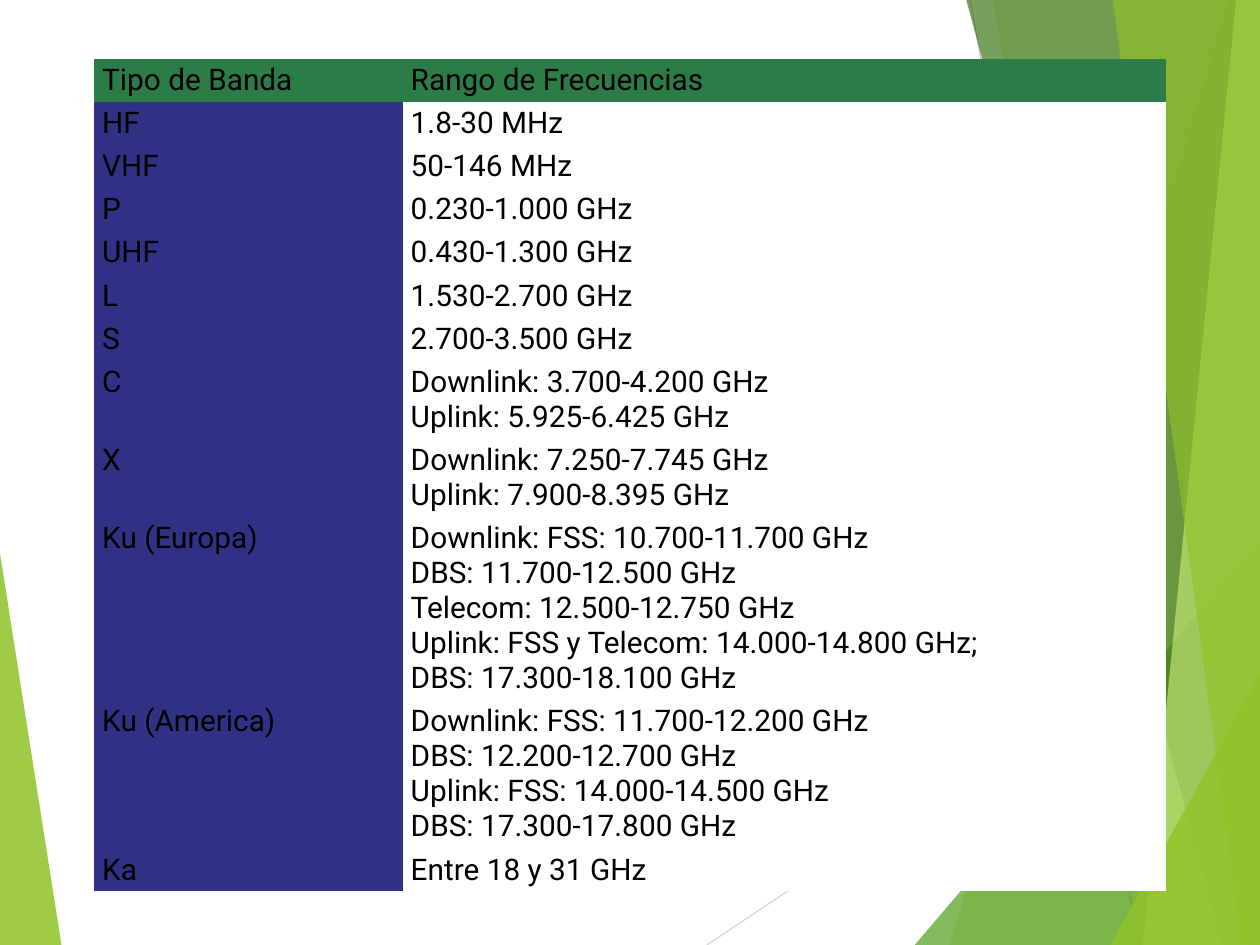
from lxml.etree import SubElement
from pptx import Presentation
from pptx.dml.color import RGBColor
from pptx.enum.shapes import MSO_CONNECTOR
from pptx.oxml.ns import qn
from pptx.util import Cm, Pt

COLORS = {
    "lime": "90C226", "green": "54A021", "forest": "3F7819", "pale": "C0E474",
    "line_light": "D9D9D9", "line_dark": "BFBFBF",
    "header": "2C7C48", "band": "313185", "range": "FFFFFF", "text": "000000",
}
PAGE_WIDTH, PAGE_HEIGHT = 25.4, 19.05
NO_STYLE = "{2D5ABB26-0587-4C30-8999-92F81FD0307C}"
TEXT_FORMAT = {"name": "Roboto", "size": Pt(17), "bold": False}
CELL_MARGINS = {
    "margin_left": Cm(0.16), "margin_right": Cm(0.16),
    "margin_top": Cm(0.08), "margin_bottom": Cm(0.08),
}
BANDS = [
    ("Tipo de Banda", ["Rango de Frecuencias"]),
    ("HF", ["1.8-30 MHz"]),
    ("VHF", ["50-146 MHz"]),
    ("P", ["0.230-1.000 GHz"]),
    ("UHF", ["0.430-1.300 GHz"]),
    ("L", ["1.530-2.700 GHz"]),
    ("S", ["2.700-3.500 GHz"]),
    ("C", ["Downlink: 3.700-4.200 GHz", "Uplink: 5.925-6.425 GHz"]),
    ("X", ["Downlink: 7.250-7.745 GHz", "Uplink: 7.900-8.395 GHz"]),
    ("Ku (Europa)", [
        "Downlink: FSS: 10.700-11.700 GHz",
        "DBS: 11.700-12.500 GHz",
        "Telecom: 12.500-12.750 GHz",
        "Uplink: FSS y Telecom: 14.000-14.800 GHz;",
        "DBS: 17.300-18.100 GHz",
    ]),
    ("Ku (America)", [
        "Downlink: FSS: 11.700-12.200 GHz",
        "DBS: 12.200-12.700 GHz",
        "Uplink: FSS: 14.000-14.500 GHz",
        "DBS: 17.300-17.800 GHz",
    ]),
    ("Ka", ["Entre 18 y 31 GHz"]),
]


def color(name):
    return RGBColor.from_string(COLORS[name])


def add_facet(page, box, points, fill, opacity):
    """Translucent polygon; points are relative to the box."""
    left, top = box[:2]
    corners = [(Cm(left + x), Cm(top + y)) for x, y in points]
    builder = page.shapes.build_freeform(*corners[0])
    builder.add_line_segments(corners[1:], close=True)
    facet = builder.convert_to_shape()
    facet.shadow.inherit = False
    facet.fill.solid()
    facet.fill.fore_color.rgb = color(fill)
    facet.line.fill.background()
    srgb = facet._element.spPr.find(qn("a:solidFill")).find(qn("a:srgbClr"))
    SubElement(srgb, qn("a:alpha")).set("val", str(opacity * 1000))


def add_thin_line(page, box, start, end, stroke):
    left, top = box[:2]
    line = page.shapes.add_connector(
        MSO_CONNECTOR.STRAIGHT,
        Cm(left + start[0]), Cm(top + start[1]), Cm(left + end[0]), Cm(top + end[1]))
    line.line.color.rgb = color(stroke)
    line.line.width = Pt(0.75)
    SubElement(line._element.spPr, qn("a:effectLst"))


def add_backdrop(page, box):
    """Green facets at both sides of the page."""
    width, height = box[2:]

    def strip(top_x, bottom_x, fill, opacity):
        points = [(top_x, 0), (bottom_x, height), (width, height), (width, 0)]
        add_facet(page, box, points, fill, opacity)

    def corner(bottom_x, right_y, fill, opacity):
        points = [(bottom_x, height), (width, right_y), (width, height)]
        add_facet(page, box, points, fill, opacity)

    # Left wedge and thin lines
    add_facet(page, box, [(0, 11.15), (1.24, height), (0, height)], "lime", 85)
    add_thin_line(page, box, (14.25, height), (width, 11.6), "line_light")
    add_thin_line(page, box, (19.56, 0), (22.96, height), "line_dark")

    # Right side, from back to front
    strip(24.77, 19.15, "lime", 30)
    strip(20.02, 23.34, "lime", 20)
    corner(18.44, 10.9, "green", 72)
    strip(19.48, 24.64, "forest", 70)
    strip(24.92, 23.04, "pale", 70)
    strip(22.43, 25.04, "lime", 65)
    corner(22.38, 13.59, "lime", 80)


def fill_cell(cell, lines, fill):
    cell.fill.solid()
    cell.fill.fore_color.rgb = color(fill)
    for name, value in CELL_MARGINS.items():
        setattr(cell, name, value)
    para = cell.text_frame.paragraphs[0]
    for index, text in enumerate(lines):
        if index:
            para.add_line_break()
        span = para.add_run()
        span.text = text
        for name, value in TEXT_FORMAT.items():
            setattr(span.font, name, value)
        span.font.color.rgb = color("text")


def add_band_table(page, box):
    """Frequency bands; each row is as high as its lines need."""
    left, top, width, height = box
    frame = page.shapes.add_table(
        len(BANDS), 2, Cm(left), Cm(top), Cm(width), Cm(height))
    table = frame.table
    table.first_row = table.horz_banding = False
    table._tbl.tblPr.find(qn("a:tableStyleId")).text = NO_STYLE
    table.columns[0].width = Cm(6.22)
    table.columns[1].width = Cm(width - 6.22)
    for index, (band, ranges) in enumerate(BANDS):
        table.rows[index].height = Cm(0.16 + 0.7 * len(ranges))
        fill_cell(table.cell(index, 0), [band], "band" if index else "header")
        fill_cell(table.cell(index, 1), ranges, "range" if index else "header")


def main():
    deck = Presentation()
    deck.slide_width, deck.slide_height = Cm(PAGE_WIDTH), Cm(PAGE_HEIGHT)
    page = deck.slides.add_slide(deck.slide_layouts[6])
    add_backdrop(page, (0, 0, PAGE_WIDTH, PAGE_HEIGHT))
    add_band_table(page, (1.9, 1.19, 21.6, 16.62))
    deck.save("out.pptx")


if __name__ == "__main__":
    main()
